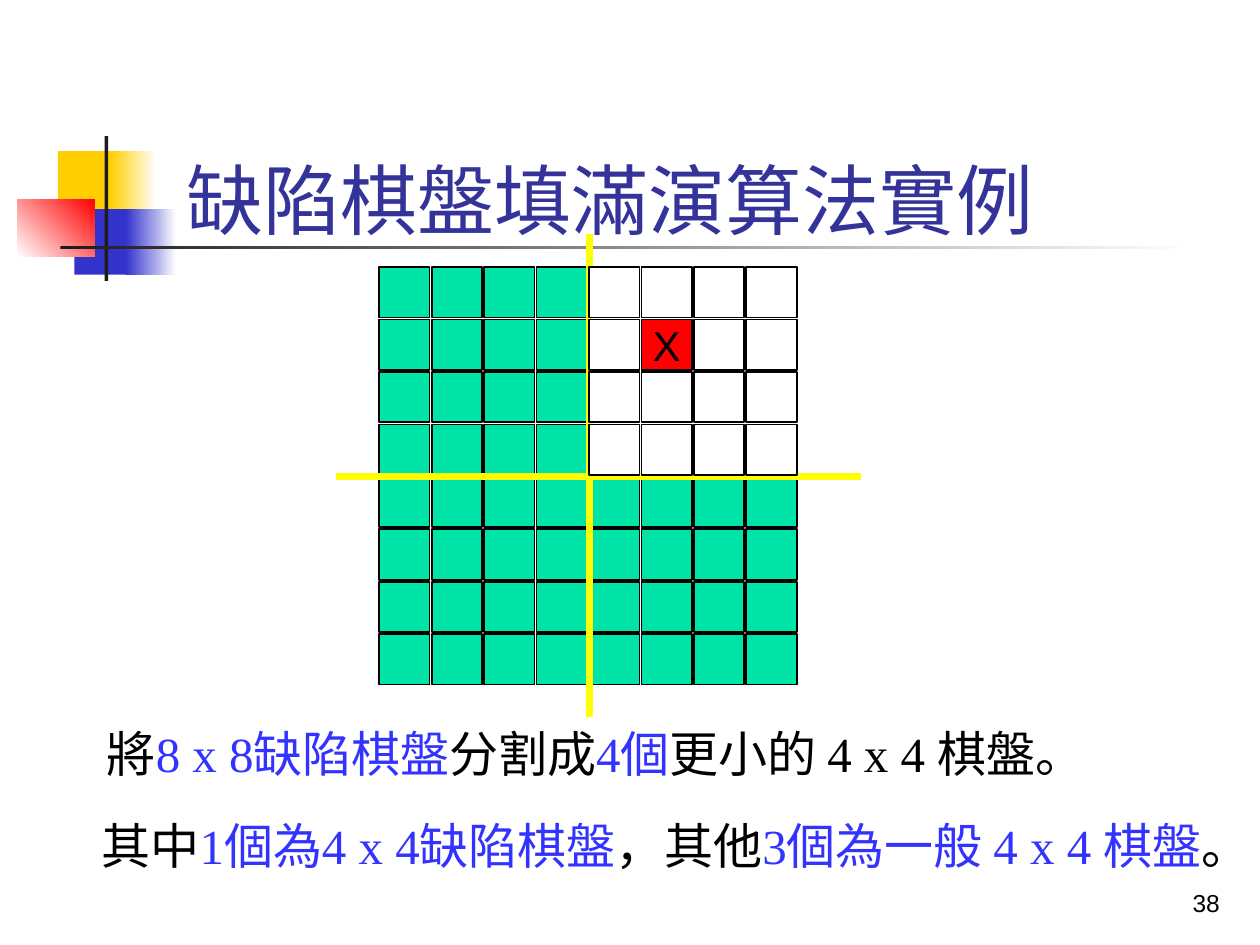
from lxml.etree import SubElement
from pptx import Presentation
from pptx.dml.color import RGBColor
from pptx.enum.shapes import MSO_CONNECTOR, MSO_SHAPE
from pptx.enum.text import MSO_ANCHOR, MSO_AUTO_SIZE, PP_ALIGN
from pptx.oxml.ns import qn
from pptx.util import Inches, Pt

THEME = {
    "black": "000000", "white": "FFFFFF", "blue": "3333FF", "title": "333399",
    "tile": "00E4A8", "defect": "FF0000", "divider": "FFFF00",
    "gold": "FFCF01", "navy": "3333CC", "ink": "1C1C1C",
    "title_font": "Roboto", "body_font": "Times New Roman", "label_font": "Arial",
    "title_size": 44, "body_size": 28, "label_size": 24, "number_size": 14,
}

TITLE = "缺陷棋盤填滿演算法實例"
PAGE_NUMBER = "38"
# Each statement: box, then (text, colour) pieces
STATEMENTS = [
    ((0.75, 5.69, 8.92, 0.57), [
        ("將", "black"), ("8 x 8缺陷棋盤", "blue"), ("分割成", "black"),
        ("4個", "blue"), ("更小的 4 x 4 棋盤。", "black")]),
    ((0.71, 6.42, 9.1, 0.57), [
        ("其中", "black"), ("1個為4 x 4缺陷棋盤", "blue"), ("，其他", "black"),
        ("3個為一般 4 x 4 棋盤", "blue"), ("。", "black")]),
]
# Box, colours (two make a gradient), gradient angle
ORNAMENTS = [
    ((0.46, 1.2, 0.48, 0.52), ["gold"], 0),
    ((0.88, 1.2, 0.36, 0.52), ["gold", "white"], 0),
    ((0.59, 1.66, 0.46, 0.52), ["navy"], 0),
    ((1, 1.66, 0.4, 0.52), ["navy", "white"], 0),
    ((0.14, 1.58, 0.61, 0.46), ["white", "defect"], 45),
    ((0.83, 1.08, 0.03, 1.15), ["ink"], 0),
    ((0.48, 1.95, 9, 0.03), ["ink", "white"], 0),
]
BOARD_LEFT, BOARD_TOP, BOARD_SIDE = 3.01, 2.12, 3.33
COUNT = 8
HALF = COUNT // 2
PITCH = BOARD_SIDE / COUNT
CELL = 0.4
DEFECT = (1, 5)  # row, column


def color(name):
    return RGBColor.from_string(THEME[name])


def style(run, font, size, color_name):
    run.font.name = THEME[font]
    run.font.size = Pt(THEME[size])
    run.font.color.rgb = color(color_name)


def add_rect(shapes, box, colors, angle=0):
    rect = shapes.add_shape(MSO_SHAPE.RECTANGLE, *map(Inches, box))
    rect.shadow.inherit = False
    rect.line.fill.background()
    if len(colors) == 1:
        rect.fill.solid()
        rect.fill.fore_color.rgb = color(colors[0])
    else:
        rect.fill.gradient()
        rect.fill.gradient_angle = angle
        for stop, name in zip(rect.fill.gradient_stops, colors):
            stop.color.rgb = color(name)
    return rect


def add_cells(slide, positions, fill):
    """Draw the given board squares as one group, marking the defect."""
    board = slide.shapes.add_group_shape()
    for row, column in positions:
        is_defect = (row, column) == DEFECT
        box = (BOARD_LEFT + column * PITCH, BOARD_TOP + row * PITCH, CELL, CELL)
        cell = add_rect(board.shapes, box, ["defect" if is_defect else fill])
        cell.line.color.rgb = color("black")
        cell.line.width = Pt(1)
        if is_defect:
            frame = cell.text_frame
            frame.word_wrap = False
            frame.vertical_anchor = MSO_ANCHOR.MIDDLE
            frame.text = "X"
            frame.paragraphs[0].alignment = PP_ALIGN.CENTER
            style(frame.paragraphs[0].runs[0], "label_font", "label_size", "black")


def add_divider(slide, start, end):
    divider = slide.shapes.add_connector(
        MSO_CONNECTOR.STRAIGHT, *map(Inches, start + end))
    divider.line.color.rgb = color("divider")
    divider.line.width = Pt(4)
    SubElement(divider._element.spPr, qn("a:effectLst"))


def add_text_frame(slide, box):
    frame = slide.shapes.add_textbox(*map(Inches, box)).text_frame
    frame.word_wrap = True
    return frame


def add_statement(slide, box, pieces):
    frame = add_text_frame(slide, box)
    frame.auto_size = MSO_AUTO_SIZE.SHAPE_TO_FIT_TEXT
    for text, color_name in pieces:
        run = frame.paragraphs[0].add_run()
        run.text = text
        style(run, "body_font", "body_size", color_name)


def add_title(slide):
    title = slide.shapes.title
    title.left, title.top, title.width, title.height = map(
        Inches, (1.38, 0.99, 8.58, 1))
    frame = title.text_frame
    frame.text = TITLE
    frame.vertical_anchor = MSO_ANCHOR.BOTTOM
    frame.paragraphs[0].alignment = PP_ALIGN.LEFT
    style(frame.paragraphs[0].runs[0], "title_font", "title_size", "title")


def add_page_number(slide):
    frame = add_text_frame(slide, (7.7, 6.83, 2.08, 0.5))
    frame.vertical_anchor = MSO_ANCHOR.BOTTOM
    frame.text = PAGE_NUMBER
    frame.paragraphs[0].alignment = PP_ALIGN.RIGHT
    style(frame.paragraphs[0].runs[0], "label_font", "number_size", "black")


def main():
    deck = Presentation()
    deck.slide_width, deck.slide_height = Inches(10), Inches(7.5)
    slide = deck.slides.add_slide(deck.slide_layouts[5])

    for ornament in ORNAMENTS:
        add_rect(slide.shapes, *ornament)
    add_title(slide)
    slide.shapes._spTree.append(slide.shapes.title._element)  # above ornaments

    squares = [(row, column) for row in range(COUNT) for column in range(COUNT)]
    defective_quarter = [(row, column) for row, column in squares
                         if row < HALF <= column]
    plain_squares = [square for square in squares if square not in defective_quarter]
    middle_x = BOARD_LEFT + BOARD_SIDE / 2
    middle_y = BOARD_TOP + BOARD_SIDE / 2

    add_cells(slide, plain_squares, "tile")
    add_divider(slide, (middle_x, 1.86), (middle_x, 5.69))
    add_divider(slide, (2.67, middle_y), (6.83, middle_y))
    add_cells(slide, defective_quarter, "white")
    for box, pieces in STATEMENTS:
        add_statement(slide, box, pieces)
    add_page_number(slide)
    deck.save("out.pptx")


if __name__ == "__main__":
    main()
